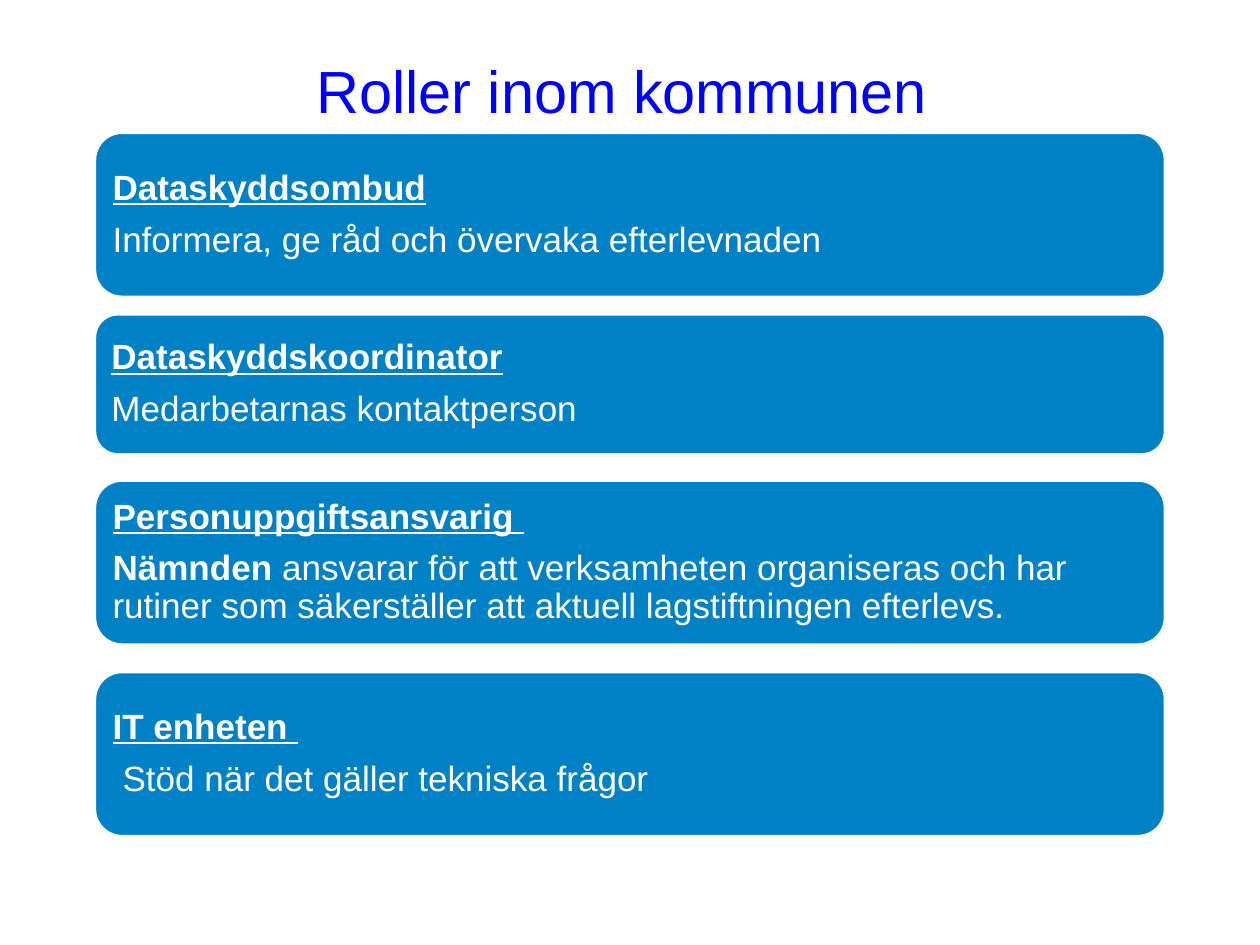
from pptx import Presentation
from pptx import util as u
from pptx.dml.color import RGBColor
from pptx.enum import shapes, text

THEME = {
    "title": {"name": "Arial", "size": u.Pt(34), "color": "0000FF"},
    "heading": {"name": "Arial", "size": u.Pt(20), "color": "FFFFFF", "bold": True, "underline": True},
    "strong": {"name": "Arial", "size": u.Pt(20), "color": "FFFFFF", "bold": True},
    "body": {"name": "Arial", "size": u.Pt(20), "color": "FFFFFF", "bold": False},
    "card": "0081C5",
    "outline": "FFFFFF",
}
FRAME = {
    "word_wrap": True,
    "auto_size": text.MSO_AUTO_SIZE.NONE,
    "vertical_anchor": text.MSO_ANCHOR.MIDDLE,
}
MARGINS = {f"margin_{side}": u.Inches(0.08) for side in ("left", "top", "right", "bottom")}
PARAGRAPH = {"alignment": text.PP_ALIGN.LEFT, "line_spacing": 0.9, "space_after": u.Pt(8)}


def apply(target, values):
    for key, value in values.items():
        setattr(target, key, value)


def add_span(para, words, style):
    span = para.add_run()
    span.text = words
    apply(span.font, {key: value for key, value in THEME[style].items() if key != "color"})
    span.font.color.rgb = RGBColor.from_string(THEME[style]["color"])


deck = Presentation()
deck.slide_width, deck.slide_height = u.Inches(10), u.Inches(7.5)
page = deck.slides.add_slide(deck.slide_layouts[5])

# Column shared by the title and the cards
left, width = deck.slide_width * 0.075, deck.slide_width * 0.85

# Title
title = page.shapes.title
apply(title, {"left": int(left), "top": u.Inches(0.44), "width": int(width), "height": u.Inches(0.55)})
apply(title.text_frame, FRAME)
para = title.text_frame.paragraphs[0]
para.alignment = text.PP_ALIGN.CENTER
add_span(para, "Roller inom kommunen ", "title")

# Role cards: top, height, heading, body spans, body indent
roles = [
    (1.05, 1.31, "Dataskyddsombud",
     [("Informera, ge råd och övervaka efterlevnaden", "body")], 0),
    (2.49, 1.12, "Dataskyddskoordinator",
     [("Medarbetarnas kontaktperson", "body")], 0),
    (3.81, 1.31, "Personuppgiftsansvarig ",
     [("Nämnden ", "strong"),
      ("ansvarar för att verksamheten organiseras och har rutiner som "
       "säkerställer att aktuell lagstiftningen efterlevs.", "body")], 0),
    (5.33, 1.31, "IT enheten ",
     [("Stöd när det gäller tekniska frågor", "body")], 0.08),
]
for top, height, heading, spans, indent in roles:
    card = page.shapes.add_shape(
        shapes.MSO_SHAPE.ROUNDED_RECTANGLE,
        int(left), u.Inches(top), int(width), u.Inches(height))
    card.shadow.inherit = False
    card.fill.solid()
    card.fill.fore_color.rgb = RGBColor.from_string(THEME["card"])
    card.line.color.rgb = RGBColor.from_string(THEME["outline"])
    card.line.width = u.Pt(2)

    frame = card.text_frame
    apply(frame, FRAME | MARGINS)
    para = frame.paragraphs[0]
    apply(para, PARAGRAPH)
    add_span(para, heading, "heading")

    para = frame.add_paragraph()
    apply(para, PARAGRAPH)
    if indent:
        para._p.get_or_add_pPr().set("marL", str(u.Inches(indent)))
    for words, style in spans:
        add_span(para, words, style)

deck.save("out.pptx")
